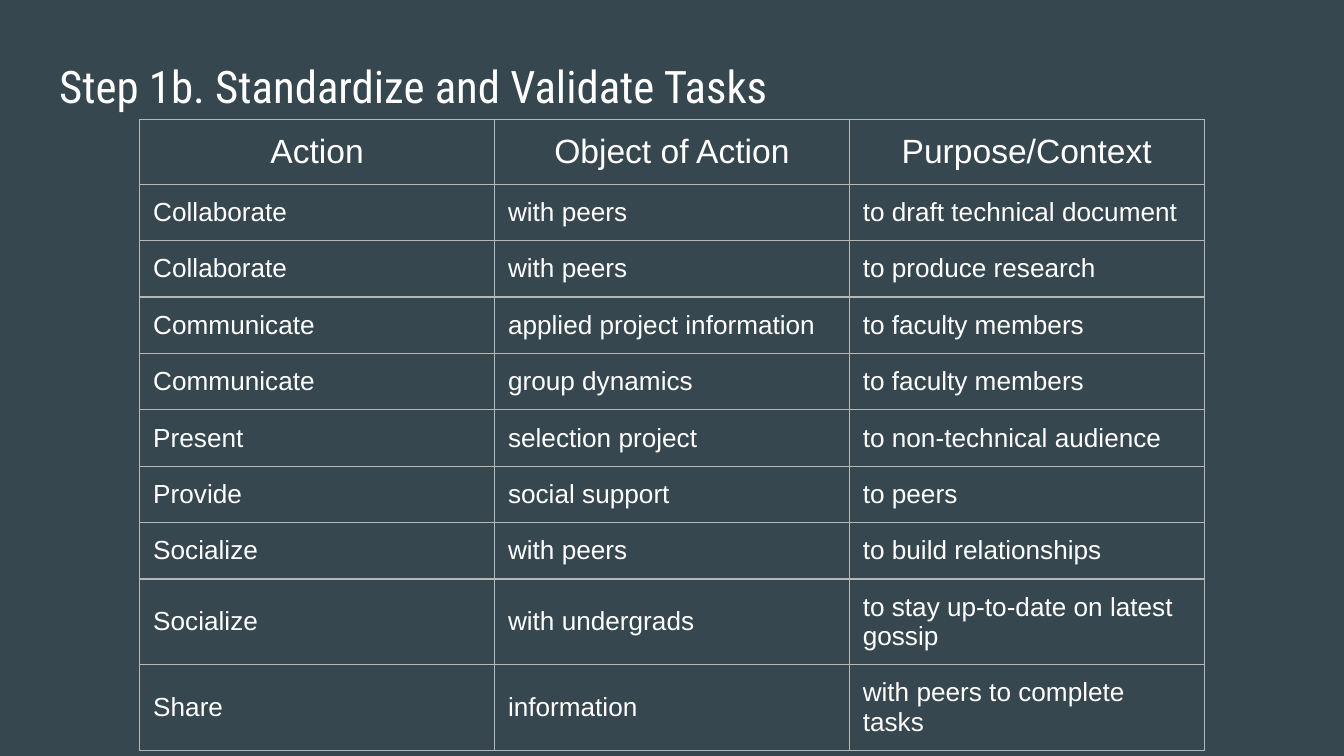
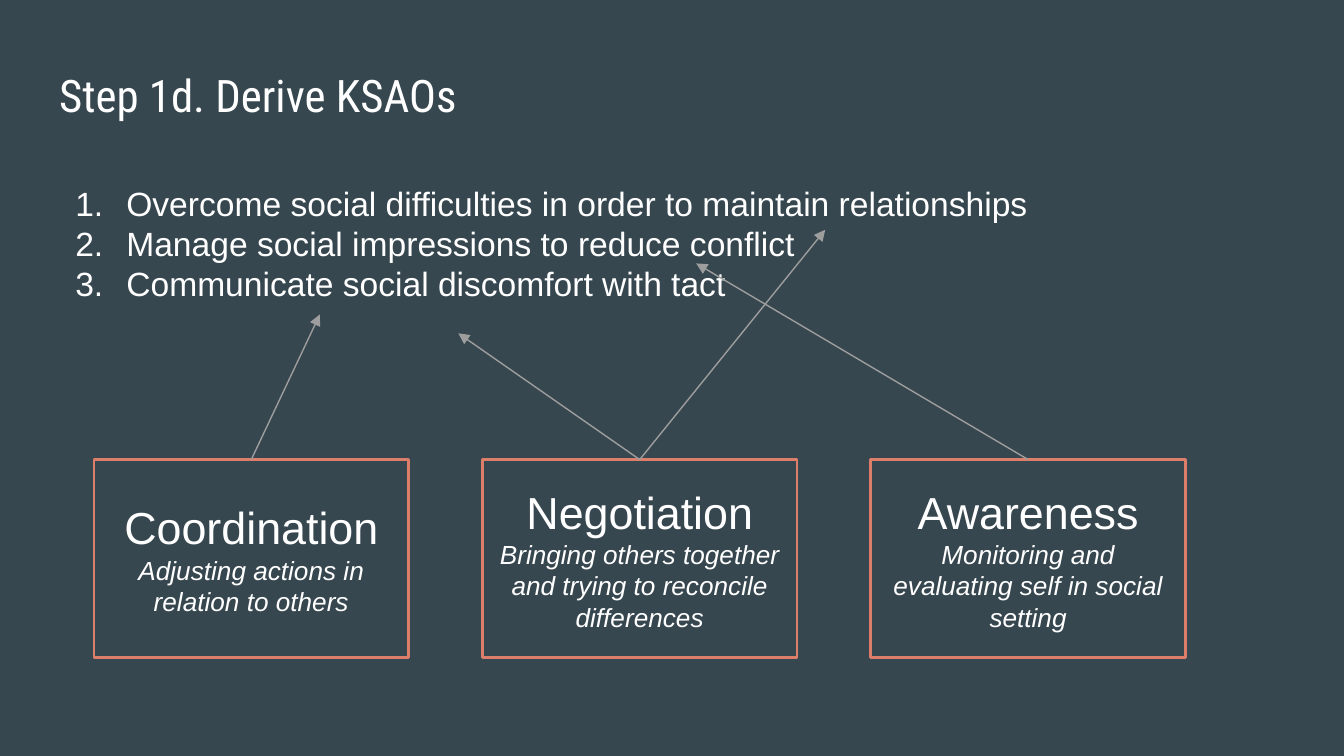
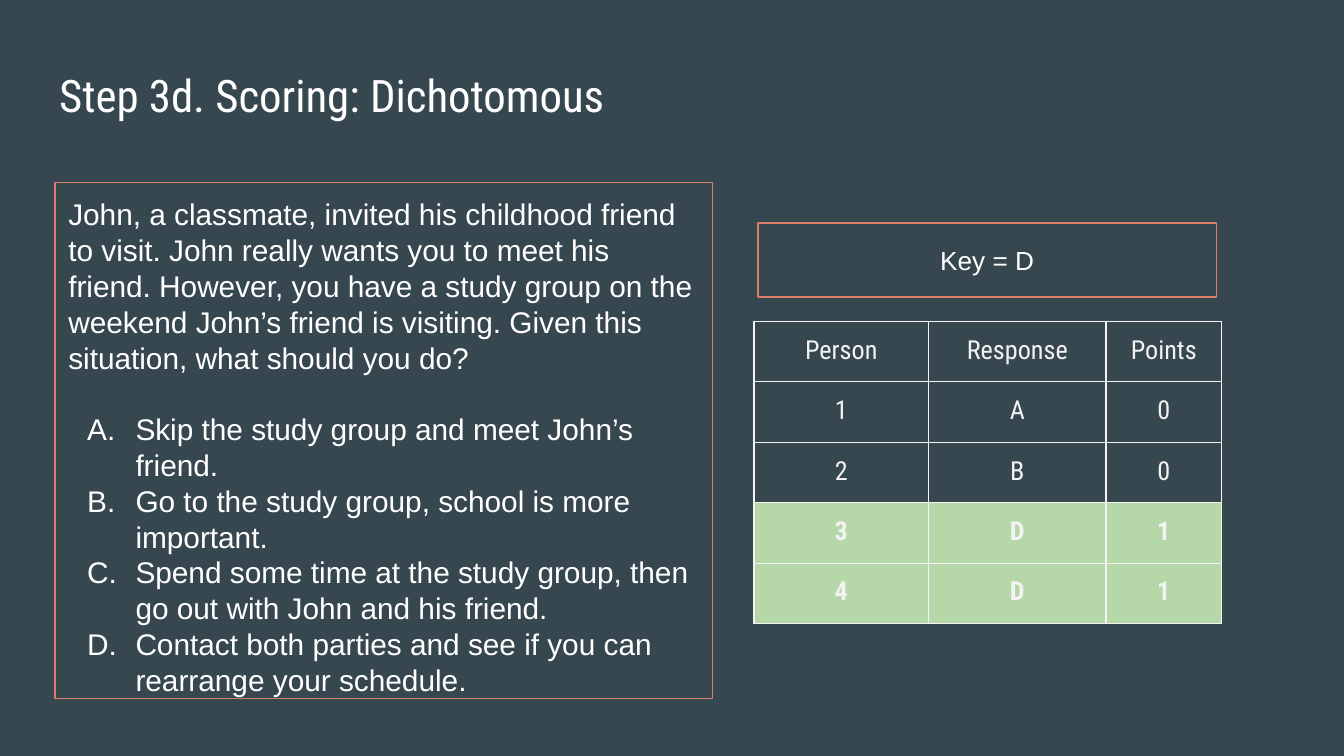
from lxml import etree
from pptx import Presentation
from pptx.dml.color import RGBColor
from pptx.enum import shapes, text
from pptx.oxml import ns
from pptx.util import Inches, Pt

SLATE = RGBColor(0x37, 0x47, 0x4F)
WHITE = RGBColor(0xFF, 0xFF, 0xFF)
PALE = RGBColor(0xF3, 0xF3, 0xF3)
SILVER = RGBColor(0xB7, 0xB7, 0xB7)
GRAY = RGBColor(0x9E, 0x9E, 0x9E)
CORAL = RGBColor(0xDD, 0x7E, 0x6B)
GREEN = RGBColor(0xB6, 0xD7, 0xA8)
SANS, HEAD = "Arial", "Roboto Condensed"
LEFT, MID = text.PP_ALIGN.LEFT, text.PP_ALIGN.CENTER
TOP, CENTER = text.MSO_ANCHOR.TOP, text.MSO_ANCHOR.MIDDLE
PAD = Inches(0.1)


def write(frame, lines, align=LEFT, anchor=TOP, face=SANS, color=WHITE):
    """Fill a frame with (text, size, options) lines."""
    frame.word_wrap = True
    frame.auto_size = text.MSO_AUTO_SIZE.NONE
    frame.vertical_anchor = anchor
    frame.margin_left = frame.margin_right = PAD
    frame.margin_top = frame.margin_bottom = PAD
    for i, (words, size, opts) in enumerate(lines):
        par = frame.add_paragraph() if i else frame.paragraphs[0]
        par.text = words
        par.alignment = align
        par.line_spacing = 1.0
        par.space_before = Pt(opts.get("before", 0))
        if "number" in opts:
            props = par._p.get_or_add_pPr()
            props.set("marL", str(Inches(0.5)))
            props.set("indent", str(-Inches(opts["hang"])))
            tint = etree.SubElement(props, ns.qn("a:buClr"))
            etree.SubElement(tint, ns.qn("a:srgbClr"), val=str(color))
            etree.SubElement(props, ns.qn("a:buAutoNum"), type=opts["number"])
        font = par.font
        font.name, font.size, font.color.rgb = face, Pt(size), color
        font.bold = opts.get("bold", False)
        font.italic = opts.get("italic", False)


def frame_box(slide, place, width, lines, align=MID, anchor=CENTER):
    """Add a coral outlined rectangle with text."""
    box = slide.shapes.add_shape(shapes.MSO_SHAPE.RECTANGLE, *map(Inches, place))
    box.shadow.inherit = False
    box.fill.background()
    box.line.color.rgb = CORAL
    box.line.width = Pt(width)
    write(box.text_frame, lines, align, anchor)
    return box


# Widescreen page, 16 to 9
prs = Presentation()
prs.slide_width = Inches(10)
prs.slide_height = Inches(10) * 9 // 16
back = prs.slide_master.background.fill
back.solid()
back.fore_color.rgb = SLATE

# Slides and titles
heads = [
    ("Step 1b. Standardize and Validate Tasks", 5, 0.34, 0.63),
    ("Step 1d. Derive KSAOs", 1, 0.4, 0.67),
    ("Step 3d. Scoring: Dichotomous", 5, 0.4, 0.67),
]
pages = []
for words, layout, top, height in heads:
    page = prs.slides.add_slide(prs.slide_layouts[layout])
    title = page.shapes.title
    title.left, title.top = Inches(0.34), Inches(top)
    title.width, title.height = Inches(9.32), Inches(height)
    write(title.text_frame, [(words, 24, {})], face=HEAD)
    pages.append(page)
tasks, skills, score = pages

# Numbered list of skills
body = skills.placeholders[1]
body.left, body.top = Inches(0.34), Inches(1.26)
body.width, body.height = Inches(9.32), Inches(1.96)
needs = [
    "Overcome social difficulties in order to maintain relationships",
    "Manage social impressions to reduce conflict",
    "Communicate social discomfort with tact",
]
mark = {"number": "arabicPeriod", "hang": 0.38}
write(body.text_frame, [(need, 18, mark) for need in needs])

# Skill boxes, each with arrows from its top to the list
traits = [
    ("Coordination", "Adjusting actions in relation to others", [(2.38, 2.34)]),
    ("Negotiation", "Bringing others together and trying to reconcile differences",
     [(6.14, 1.71), (3.41, 2.48)]),
    ("Awareness", "Monitoring and evaluating self in social setting", [(5.18, 1.96)]),
]
for i, (name, sense, ends) in enumerate(traits):
    box = frame_box(skills, (0.7 + 2.89 * i, 3.42, 2.34, 1.47), 1.5,
                    [(name, 24, {}), (sense, 14, {"italic": True})])
    for x, y in ends:
        arrow = skills.shapes.add_connector(
            shapes.MSO_CONNECTOR.STRAIGHT, 0, 0, Inches(x), Inches(y))
        arrow.begin_connect(box, 0)
        arrow.line.color.rgb = GRAY
        arrow.line.width = Pt(0.75)
        etree.SubElement(arrow.line._get_or_add_ln(), ns.qn("a:tailEnd"), type="triangle")
        etree.SubElement(arrow._element.spPr, ns.qn("a:effectLst"))

# Question with its answers, and the key
story = ("John, a classmate, invited his childhood friend to visit. John really wants "
         "you to meet his friend. However, you have a study group on the weekend "
         "John’s friend is visiting. Given this situation, what should you do?")
picks = [
    "Skip the study group and meet John’s friend.",
    "Go to the study group, school is more important.",
    "Spend some time at the study group, then go out with John and his friend.",
    "Contact both parties and see if you can rearrange your schedule.",
]
mark = {"number": "alphaUcPeriod", "hang": 0.36}
lines = [(story, 16, {})]
for i, pick in enumerate(picks):
    lines.append((pick, 16, {**mark, "before": 0 if i else 19}))
frame_box(score, (0.41, 1.36, 4.89, 3.84), 0.75, lines, LEFT, TOP)
frame_box(score, (5.64, 1.66, 3.41, 0.55), 0.75, [("Key = D", 14, {})])

# Tables
duties = [
    ("Action", "Object of Action", "Purpose/Context"),
    ("Collaborate", "with peers", "to draft technical document"),
    ("Collaborate", "with peers", "to produce research"),
    ("Communicate", "applied project information", "to faculty members"),
    ("Communicate", "group dynamics", "to faculty members"),
    ("Present", "selection project", "to non-technical audience"),
    ("Provide", "social support", "to peers"),
    ("Socialize", "with peers", "to build relationships"),
    ("Socialize", "with undergrads", "to stay up-to-date on latest gossip"),
    ("Share", "information", "with peers to complete tasks"),
]
points = [
    ("Person", "Response", "Points"),
    ("1", "A", "0"),
    ("2", "B", "0"),
    ("3", "D", "1"),
    ("4", "D", "1"),
]
# slide, rows, left, top, column widths, row height, font, text, border,
# head size, body alignment, body anchor
grids = [
    (tasks, duties, 1.04, 0.89, (2.64, 2.64, 2.64), 0.42, SANS, WHITE, SILVER,
     18, LEFT, CENTER),
    (score, points, 5.61, 2.39, (1.3, 1.32, 0.86), 0.45, HEAD, PALE, PALE,
     14, MID, TOP),
]
for page, rows, left, top, cols, high, face, color, edge, size, align, anchor in grids:
    table = page.shapes.add_table(
        len(rows), len(cols), Inches(left), Inches(top),
        Inches(sum(cols)), Inches(high * len(rows))).table
    table.first_row = table.horz_banding = False
    for col, width in zip(table.columns, cols):
        col.width = Inches(width)
    for r, row in enumerate(rows):
        table.rows[r].height = Inches(high)
        right = row[1] == "D"
        for c, words in enumerate(row):
            cell = table.cell(r, c)
            cell.margin_left = cell.margin_right = PAD
            cell.margin_top = cell.margin_bottom = PAD
            cell.vertical_anchor = anchor if r else TOP
            write(cell.text_frame, [(words, 14 if r else size, {"bold": right})],
                  align if r else MID, face=face, color=color)
            props = cell._tc.get_or_add_tcPr()
            for side in ("a:lnL", "a:lnR", "a:lnT", "a:lnB"):
                line = etree.SubElement(props, ns.qn(side), w=str(Pt(0.75)))
                solid = etree.SubElement(line, ns.qn("a:solidFill"))
                etree.SubElement(solid, ns.qn("a:srgbClr"), val=str(edge))
            if right:
                cell.fill.solid()
                cell.fill.fore_color.rgb = GREEN
            else:
                cell.fill.background()

prs.save("out.pptx")
